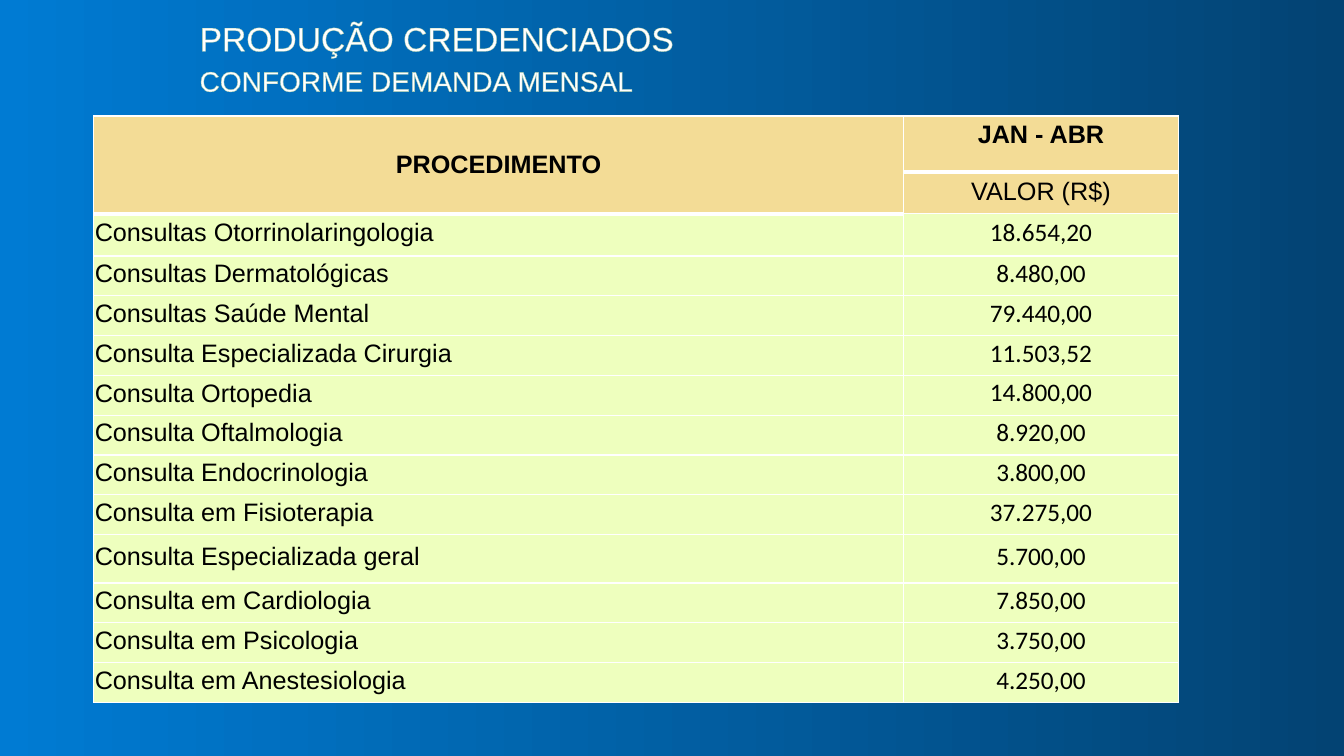
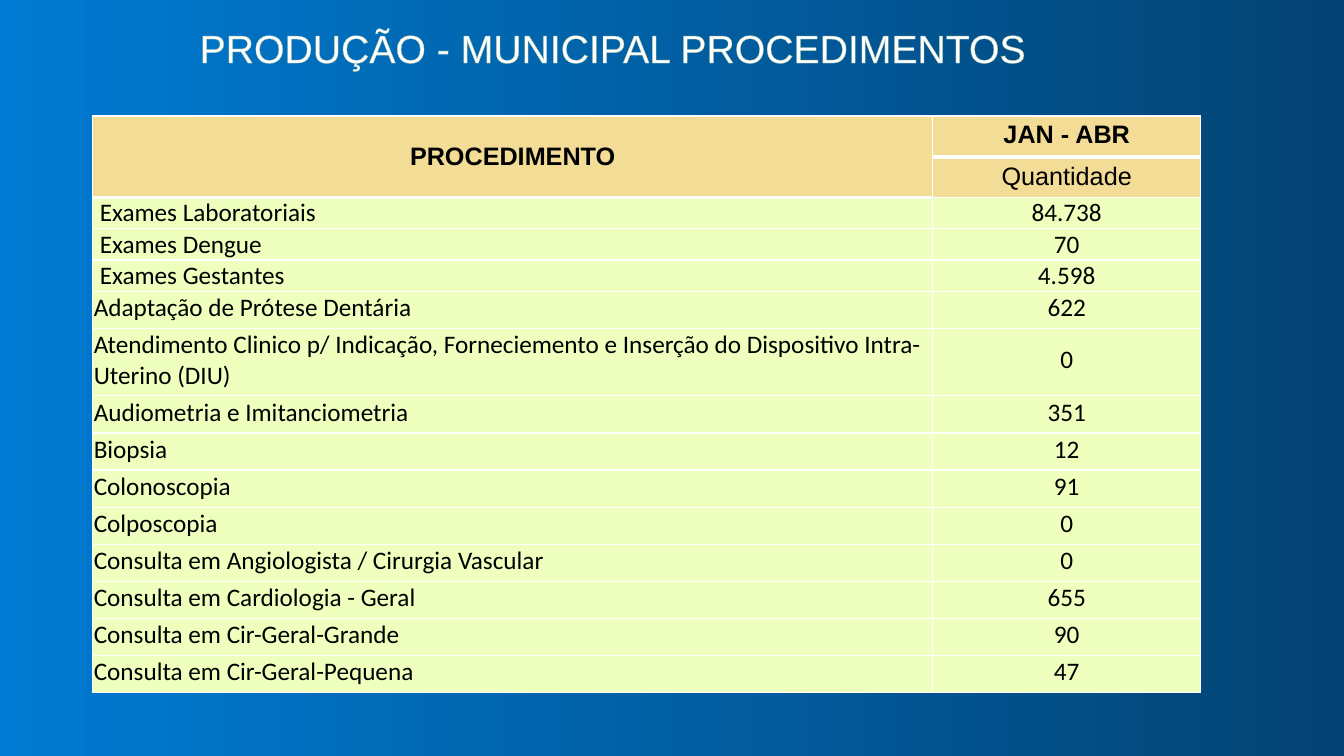
from lxml.etree import SubElement
from pptx import Presentation
from pptx.dml.color import RGBColor
from pptx.enum.text import MSO_ANCHOR as Anchor, MSO_AUTO_SIZE as AutoSize, PP_ALIGN as Align
from pptx.oxml import parse_xml
from pptx.oxml.ns import nsdecls, qn
from pptx.util import Inches, Pt

WHITE, BLACK, OUTLINE = "FFFFFF", "000000", "AACAAA"
HEADER_FILL, BODY_FILL = "F3DC96", "EEFFBE"
BACKGROUND = ("007BD3", "034373")
HEADER_INSETS = (0.1, 0.05, 0.1, 0.05)
BODY_INSETS = (0.01, 0.01, 0.01, 0.05)
EXAM_INSETS = (0.07, 0, 0.07, 0)

CONSULTATIONS = [
    ("Consultas Otorrinolaringologia", "18.654,20"),
    ("Consultas Dermatológicas", "8.480,00"),
    ("Consultas Saúde Mental", "79.440,00"),
    ("Consulta Especializada Cirurgia", "11.503,52"),
    ("Consulta Ortopedia", "14.800,00"),
    ("Consulta Oftalmologia", "8.920,00"),
    ("Consulta Endocrinologia", "3.800,00"),
    ("Consulta em Fisioterapia", "37.275,00"),
    ("Consulta Especializada geral", "5.700,00"),
    ("Consulta em Cardiologia", "7.850,00"),
    ("Consulta em Psicologia", "3.750,00"),
    ("Consulta em Anestesiologia", "4.250,00"),
]
PROCEDURES = [
    ("Exames Laboratoriais", "84.738"),
    ("Exames Dengue", "70"),
    ("Exames Gestantes", "4.598"),
    ("Adaptação de Prótese Dentária", "622"),
    ("Atendimento Clinico p/ Indicação, Forneciemento e Inserção do "
     "Dispositivo Intra-Uterino (DIU)", "0"),
    ("Audiometria e Imitanciometria", "351"),
    ("Biopsia", "12"),
    ("Colonoscopia", "91"),
    ("Colposcopia", "0"),
    ("Consulta em Angiologista / Cirurgia Vascular", "0"),
    ("Consulta em Cardiologia - Geral", "655"),
    ("Consulta em Cir-Geral-Grande", "90"),
    ("Consulta em Cir-Geral-Pequena", "47"),
]


def rgb(color):
    """Turn a hex string into a colour."""
    return RGBColor.from_string(color)


class Report:
    """Holds the deck, its style and the current page."""

    def __init__(self):
        """Open a wide deck with the shared gradient background."""
        self.deck = Presentation()
        self.deck.slide_width, self.deck.slide_height = Inches(13.33), Inches(7.5)
        self.page = None
        fill = self.deck.slide_master.background.fill
        fill.gradient()
        fill.gradient_angle = 0
        for stop, position, color in zip(fill.gradient_stops, (0, 1), BACKGROUND):
            stop.position = position
            stop.color.rgb = rgb(color)

    def add_page(self, top, lines):
        """Start a page whose title has the given (text, size) lines."""
        self.page = self.deck.slides.add_slide(self.deck.slide_layouts[5])
        title = self.page.shapes.title
        title.left, title.top = Inches(1.88), Inches(top)
        title.width, title.height = Inches(10.5), Inches(0.94)
        frame = title.text_frame
        frame.auto_size, frame.vertical_anchor = AutoSize.NONE, Anchor.MIDDLE
        frame.text = "\n".join(text for text, size in lines)
        for index, (para, (text, size)) in enumerate(zip(frame.paragraphs, lines)):
            para.space_before = Pt(4 if index else 0)
            self.format(para, size, "Arial", WHITE, Align.LEFT)
            self.outline(para.runs[0])

    def format(self, para, size, face, color, align, bold=False):
        """Set the font and alignment of a paragraph."""
        para.alignment = align
        font = para.font
        font.size, font.name, font.bold = Pt(size), face, bold
        font.color.rgb = rgb(color)

    def outline(self, span):
        """Draw a thin line around the letters of a run."""
        span._r.get_or_add_rPr().insert(0, parse_xml(
            f'<a:ln {nsdecls("a")} w="{Pt(0.8)}"><a:solidFill>'
            f'<a:srgbClr val="{OUTLINE}"/></a:solidFill></a:ln>'))

    def border(self, cell, bottom):
        """Give a cell white borders, the lower one as wide as asked."""
        properties = cell._tc.get_or_add_tcPr()
        for side, width in (("L", 1), ("R", 1), ("T", 1), ("B", bottom)):
            line = SubElement(properties, qn(f"a:ln{side}"), w=str(Pt(width)))
            SubElement(SubElement(line, qn("a:solidFill")), qn("a:srgbClr"), val=WHITE)

    def fill_cell(self, cell, text, fill, face, align, insets,
                  anchor=Anchor.MIDDLE, bold=False, bottom=1):
        """Write and style one table cell."""
        self.border(cell, bottom)
        cell.fill.solid()
        cell.fill.fore_color.rgb = rgb(fill)
        cell.margin_left, cell.margin_top, cell.margin_right, cell.margin_bottom = map(Inches, insets)
        cell.vertical_anchor = anchor
        cell.text = text
        self.format(cell.text_frame.paragraphs[0], 18, face, BLACK, align, bold)

    def add_table(self, left, widths, height, unit, rows, fixed_heights,
                  name_face="Calibri", insets=None):
        """Add a table; rows without a fixed height share what is left."""
        count = len(rows) + 2
        shared = (height - sum(fixed_heights.values())) / (count - len(fixed_heights))
        table = self.page.shapes.add_table(
            count, 2, Inches(left), Inches(1.15), Inches(sum(widths)), Inches(height)).table
        table.first_row = table.horz_banding = False
        for column, width in zip(table.columns, widths):
            column.width = Inches(width)
        for index, row in enumerate(table.rows):
            row.height = Inches(fixed_heights.get(index, shared))

        heads = [(0, 0, "PROCEDIMENTO", Anchor.MIDDLE, True, 3),
                 (1, 0, "", Anchor.MIDDLE, True, 3),
                 (0, 1, "JAN - ABR", Anchor.TOP, True, 3),
                 (1, 1, unit, Anchor.TOP, False, 1)]
        for row, column, text, anchor, bold, bottom in heads:
            self.fill_cell(table.cell(row, column), text, HEADER_FILL, "Arial", Align.CENTER,
                           HEADER_INSETS, anchor, bold, bottom)
        table.cell(0, 0).merge(table.cell(1, 0))

        for index, (name, value) in enumerate(rows):
            margins = (insets or {}).get(index, BODY_INSETS)
            self.fill_cell(table.cell(index + 2, 0), name, BODY_FILL, name_face, Align.LEFT, margins)
            self.fill_cell(table.cell(index + 2, 1), value, BODY_FILL, "Calibri", Align.CENTER, margins)


def main():
    """Build both pages and save the deck."""
    report = Report()
    report.add_page(0.1, [("PRODUÇÃO CREDENCIADOS", 24), ("CONFORME DEMANDA MENSAL", 20)])
    report.add_table(0.93, (8.03, 2.73), 5.82, "VALOR (R$)", CONSULTATIONS,
                     {0: 0.56, 1: 0.41, 2: 0.42, 10: 0.48}, name_face="Arial")
    report.add_page(0, [("PRODUÇÃO - MUNICIPAL PROCEDIMENTOS", 28)])
    report.add_table(0.92, (8.33, 2.66), 5.72, "Quantidade", PROCEDURES,
                     {0: 0.41, 1: 0.4, 2: 0.31, 3: 0.31, 4: 0.31, 6: 0.67},
                     insets=dict.fromkeys(range(3), EXAM_INSETS))
    report.deck.save("out.pptx")


if __name__ == "__main__":
    main()
